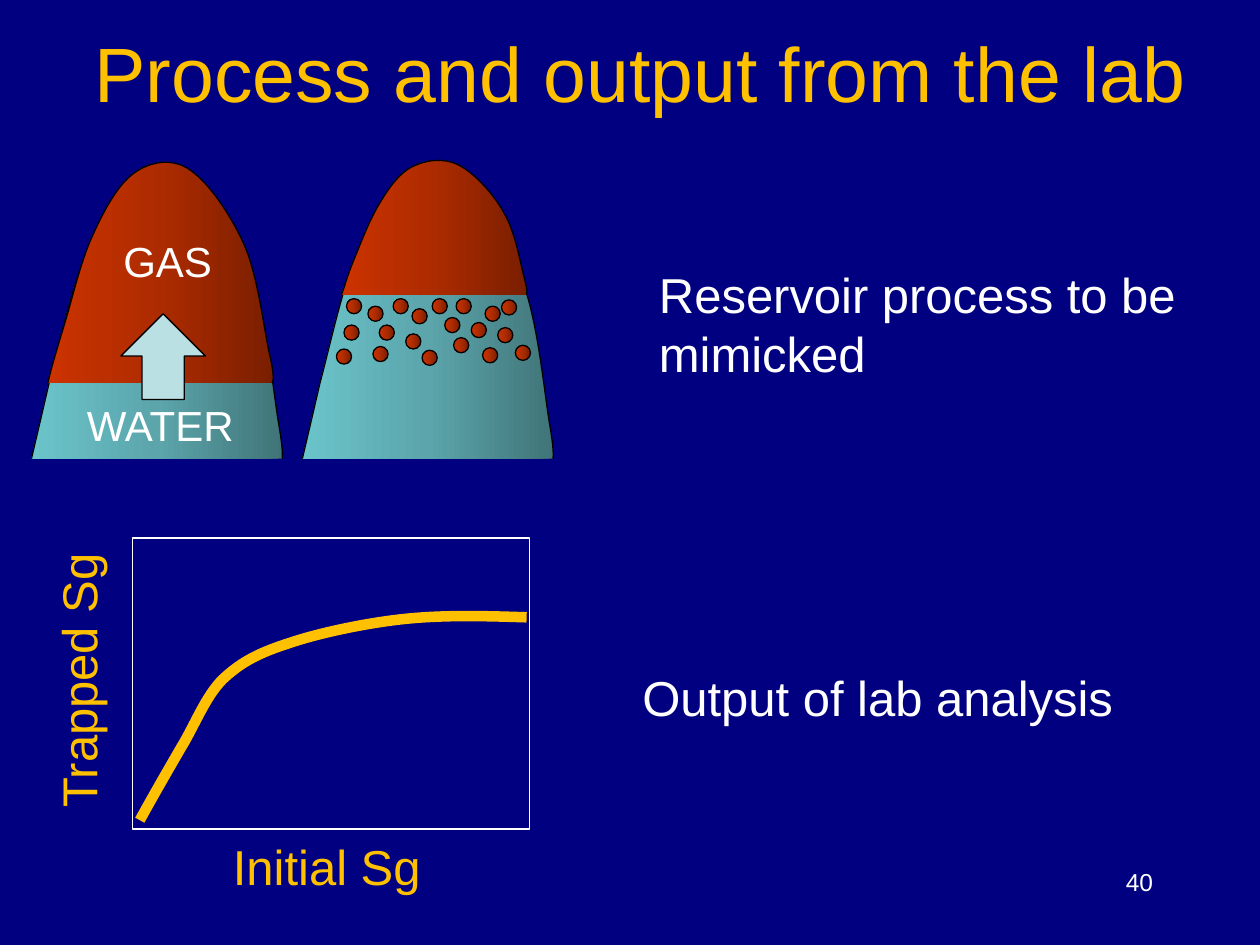
from copy import deepcopy

from lxml import etree
from pptx import Presentation
from pptx.dml.color import RGBColor
from pptx.enum.shapes import MSO_SHAPE
from pptx.enum.text import MSO_ANCHOR, PP_ALIGN
from pptx.oxml.ns import qn
from pptx.util import Inches, Pt

LEFT, CENTER, RIGHT = PP_ALIGN.LEFT, PP_ALIGN.CENTER, PP_ALIGN.RIGHT
TOP, MIDDLE = MSO_ANCHOR.TOP, MSO_ANCHOR.MIDDLE
OVAL, UP_ARROW, RECTANGLE = MSO_SHAPE.OVAL, MSO_SHAPE.UP_ARROW, MSO_SHAPE.RECTANGLE

THEME = {
    "font": "Arial",
    "background": "000080",
    "accent": "FFC000",
    "text": "FFFFFF",
    "outline": "000000",
    "arrow": "BBE0E3",
    "water": ("407478", "5BA5AB", "6BC4CB"),
    "gas": ("791E00", "AC2B00", "CC3300"),
    "title": 44, "body": 28, "label": 24, "number": 14,
    "thin": 0.75, "thick": 6,
}
COLUMNS, ROWS = 10, 7.5

presentation = Presentation()
presentation.slide_width, presentation.slide_height = Inches(COLUMNS), Inches(ROWS)
COLUMN = presentation.slide_width / COLUMNS
ROW = presentation.slide_height / ROWS
slide = presentation.slides.add_slide(presentation.slide_layouts[6])
slide.background.fill.solid()
slide.background.fill.fore_color.rgb = RGBColor.from_string(THEME["background"])
shapes = slide.shapes


def add_curve(knots, shift=0):
    """Draw an open outline of cubic curves: a start, then two controls and an end each."""
    points = [(round((x + shift) * COLUMN), round(y * ROW)) for x, y in knots]
    builder = shapes.build_freeform(*points[0])
    builder.add_line_segments(points[1:], close=False)
    shape = builder.convert_to_shape()
    lines = shape.element.spPr.findall(".//" + qn("a:lnTo"))
    outline = lines[0].getparent()
    for first in range(0, len(lines), 3):
        curve = etree.SubElement(outline, qn("a:cubicBezTo"))
        for line in lines[first:first + 3]:
            curve.append(line[0])
            outline.remove(line)
    return shape


def add_text(text, box, size, color="text", align=LEFT, anchor=TOP, wrap=False, rotation=0):
    left, top, width, height = box
    shape = shapes.add_textbox(round(left * COLUMN), round(top * ROW),
                               round(width * COLUMN), round(height * ROW))
    shape.rotation = rotation
    frame = shape.text_frame
    frame.word_wrap, frame.vertical_anchor = wrap, anchor
    paragraph = frame.paragraphs[0]
    paragraph.text, paragraph.alignment = text, align
    font = paragraph.runs[0].font
    font.color.rgb = RGBColor.from_string(THEME[color])
    for name, value in {"name": THEME["font"], "size": Pt(THEME[size])}.items():
        setattr(font, name, value)
    return shape


add_text("40", (7.17, 6.83, 2.08, 0.5), "number", align=RIGHT, wrap=True)
add_text("Process and output from the lab", (0.17, -0.06, 9.83, 1.25), "title", "accent",
         CENTER, MIDDLE, wrap=True)

# Reservoir before and after the water rises
water_hill = [
    (0.25, 3.64), (0.29, 3.47), (0.33, 3.3), (0.39, 3.04), (0.46, 2.78), (0.55, 2.36),
    (0.65, 2.1), (0.76, 1.83), (0.88, 1.56), (1.02, 1.45), (1.16, 1.33), (1.35, 1.29),
    (1.52, 1.42), (1.68, 1.55), (1.89, 1.92), (2, 2.24), (2.12, 2.56), (2.17, 3.11),
    (2.21, 3.35), (2.25, 3.58), (2.24, 3.61), (2.24, 3.64)]
gas_before = [
    (0.38, 3.04), (0.41, 2.91), (0.45, 2.78), (0.51, 2.58), (0.57, 2.39), (0.64, 2.07),
    (0.74, 1.86), (0.83, 1.66), (0.94, 1.46), (1.07, 1.37), (1.2, 1.28), (1.37, 1.25),
    (1.51, 1.35), (1.66, 1.45), (1.85, 1.73), (1.95, 1.97), (2.05, 2.21), (2.1, 2.64),
    (2.14, 2.81), (2.18, 2.99), (2.17, 3.02), (2.16, 3.04)]
gas_after = [
    (2.71, 2.34), (2.74, 2.26), (2.76, 2.18), (2.81, 2.06), (2.86, 1.94), (2.93, 1.75),
    (3.01, 1.62), (3.08, 1.5), (3.17, 1.37), (3.28, 1.32), (3.38, 1.27), (3.52, 1.25),
    (3.64, 1.31), (3.76, 1.37), (3.92, 1.54), (4, 1.69), (4.09, 1.84), (4.13, 2.09),
    (4.16, 2.2), (4.19, 2.31), (4.18, 2.33), (4.18, 2.34)]
HILL_PITCH = 2.15
styled = [  # shape, fill, line colour, line width
    (add_curve(knots, shift), fill, "outline", "thin")
    for knots, shift, fill in (
        (water_hill, 0, "water"), (gas_before, 0, "gas"),
        (water_hill, HILL_PITCH, "water"), (gas_after, 0, "gas"))]

bubbles = [
    (2.75, 2.37), (2.92, 2.43), (3.12, 2.37), (2.73, 2.58), (3.01, 2.58), (3.27, 2.45),
    (3.43, 2.37), (3.22, 2.65), (2.67, 2.77), (3.53, 2.52), (3.62, 2.37), (2.96, 2.75),
    (3.35, 2.78), (3.6, 2.68), (3.85, 2.43), (3.74, 2.56), (3.98, 2.38), (3.95, 2.6),
    (3.83, 2.76), (4.09, 2.74)]
BUBBLE = 0.12
presets = [(OVAL, (x, y, BUBBLE, BUBBLE), "gas", "outline") for x, y in bubbles]
presets += [(UP_ARROW, (0.96, 2.49, 0.67, 0.68), "arrow", "outline"),
            (RECTANGLE, (1.05, 4.27, 3.15, 2.31), None, "text")]
for kind, (left, top, width, height), fill, line in presets:
    shape = shapes.add_shape(kind, round(left * COLUMN), round(top * ROW),
                             round(width * COLUMN), round(height * ROW))
    styled.append((shape, fill, line, "thin"))

# Trapped against initial gas saturation
trapped_curve = [
    (1.11, 6.51), (1.22, 6.31), (1.33, 6.12), (1.44, 5.93), (1.55, 5.75), (1.63, 5.53),
    (1.77, 5.39), (1.92, 5.25), (2.06, 5.18), (2.31, 5.1), (2.55, 5.02), (2.93, 4.94),
    (3.24, 4.91), (3.55, 4.88), (3.87, 4.89), (4.18, 4.9)]
styled.append((add_curve(trapped_curve), None, "accent", "thick"))

for shape, fill, line, weight in styled:
    shape.shadow.inherit = False
    shape.line.color.rgb = RGBColor.from_string(THEME[line])
    shape.line.width = Pt(THEME[weight])
    if fill is None:
        shape.fill.background()
    elif isinstance(THEME[fill], str):
        shape.fill.solid()
        shape.fill.fore_color.rgb = RGBColor.from_string(THEME[fill])
    else:
        shape.fill.gradient()
        shape.fill.gradient_angle = 180
        stop_list = shape.element.spPr.find(".//" + qn("a:gsLst"))
        stop_list.append(deepcopy(stop_list[-1]))
        for stop, position, color in zip(shape.fill.gradient_stops, (0, 0.5, 1), THEME[fill]):
            stop.position = position
            stop.color.rgb = RGBColor.from_string(color)

add_text("Initial Sg", (1.75, 6.59, 1.71, 0.57), "body", "accent")
add_text("Trapped Sg", (-0.5, 5.1, 2.24, 0.57), "body", "accent", rotation=270)
process = add_text("Reservoir process to be mimicked", (4.93, 1.58, 4.99, 2.1), "body", wrap=True)
process.text_frame.margin_left = round(0.3 * COLUMN)
process.text_frame.margin_top = round(0.52 * ROW)
add_text("GAS", (0.88, 1.82, 0.91, 0.5), "label")
add_text("WATER", (0.59, 3.12, 1.38, 0.5), "label")
add_text("Output of lab analysis", (5, 5.25, 3.98, 0.57), "body")

presentation.save("out.pptx")
